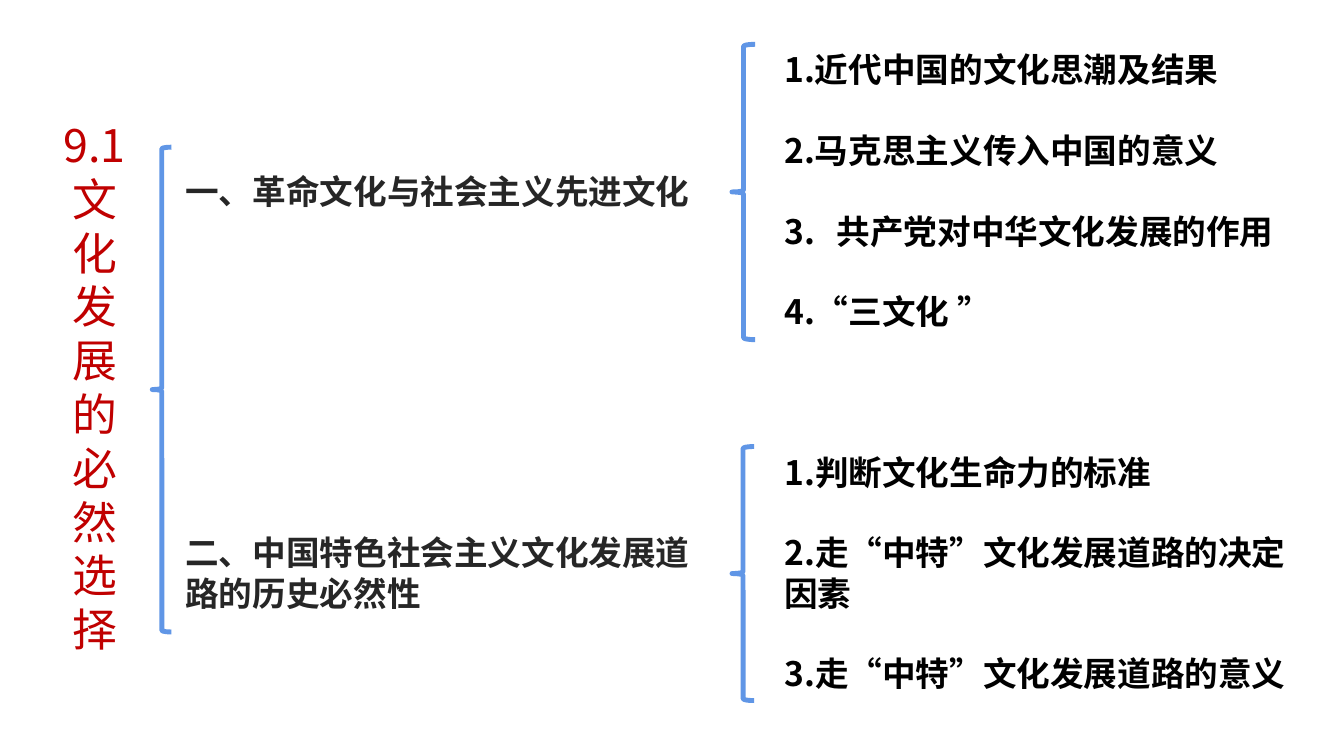
"""Build the outline slide for lesson 9.1 with its bracketed branches."""
from dataclasses import dataclass

from lxml.etree import SubElement
from pptx import Presentation
from pptx.dml.color import RGBColor
from pptx.enum.lang import MSO_LANGUAGE_ID
from pptx.enum.shapes import MSO_SHAPE
from pptx.enum.text import MSO_AUTO_SIZE, PP_ALIGN
from pptx.oxml.ns import qn
from pptx.slide import Slide
from pptx.util import Emu, Pt

PX = 9144
FONT = "Noto Sans CJK SC"
RED, DARK, BLACK, BLUE = "C00000", "262626", "000000", "6096E6"
ITEM_GAP = 28.8
TAB_STOP = 52


@dataclass(frozen=True)
class Box:
    left: int
    top: int
    width: int
    height: int

    def emu(self) -> tuple[Emu, ...]:
        return tuple(px(n) for n in (self.left, self.top, self.width, self.height))


@dataclass(frozen=True)
class Outline:
    box: Box
    lines: tuple[str, ...]
    color: str
    size: int = 24
    bold: bool = True
    align: PP_ALIGN = PP_ALIGN.LEFT


OUTLINES = (
    Outline(Box(174, 165, 522, 50), ("一、革命文化与社会主义先进文化",), DARK),
    Outline(Box(174, 523, 521, 90), ("二、中国特色社会主义文化发展道路的历史必然性",), DARK),
    Outline(Box(45, 112, 98, 543), ("9.1文化发展的必然选择",), RED, 32, False, PP_ALIGN.CENTER),
    Outline(Box(768, 44, 510, 290), (
        "1.近代中国的文化思潮及结果",
        "2.马克思主义传入中国的意义",
        "3.\t共产党对中华文化发展的作用",
        "4.“三文化 ”",
    ), BLACK),
    Outline(Box(768, 443, 532, 250), (
        "1.判断文化生命力的标准",
        "2.走“中特”文化发展道路的决定因素",
        "3.走“中特”文化发展道路的意义",
    ), BLACK),
)
BRACES = (
    Box(151, 146, 19, 481),
    Box(726, 44, 23, 293),
    Box(726, 443, 22, 252),
)


def px(length: int) -> Emu:
    return Emu(length * PX)


def rgb(color: str) -> RGBColor:
    return RGBColor.from_string(color)


def draw_outline(slide: Slide, outline: Outline) -> None:
    frame = slide.shapes.add_textbox(*outline.box.emu()).text_frame
    frame.word_wrap = True
    frame.auto_size = MSO_AUTO_SIZE.SHAPE_TO_FIT_TEXT
    for index, line in enumerate(outline.lines):
        paragraph = frame.add_paragraph() if index else frame.paragraphs[0]
        paragraph.alignment = outline.align
        if index:
            paragraph.space_before = Pt(ITEM_GAP)
        if "\t" in line:
            tabs = SubElement(paragraph._p.get_or_add_pPr(), qn("a:tabLst"))
            SubElement(tabs, qn("a:tab"), pos=str(px(TAB_STOP)), algn="l")
        run = paragraph.add_run()
        run.text = line
        run.font.size = Pt(outline.size)
        run.font.bold = outline.bold
        run.font.color.rgb = rgb(outline.color)
        run.font.language_id = MSO_LANGUAGE_ID.SIMPLIFIED_CHINESE
        run.font.name = FONT
        SubElement(run._r.get_or_add_rPr(), qn("a:ea"), typeface=FONT)


def draw_brace(slide: Slide, box: Box) -> None:
    brace = slide.shapes.add_shape(MSO_SHAPE.LEFT_BRACE, *box.emu())
    brace.shadow.inherit = False
    brace.fill.background()
    brace.line.color.rgb = rgb(BLUE)
    brace.line.width = Pt(3.5)


def main() -> None:
    presentation = Presentation()
    presentation.slide_width = px(1333)
    presentation.slide_height = px(750)
    slide = presentation.slides.add_slide(presentation.slide_layouts[6])
    for outline in OUTLINES:
        draw_outline(slide, outline)
    for box in BRACES:
        draw_brace(slide, box)
    presentation.save("out.pptx")


if __name__ == "__main__":
    main()
